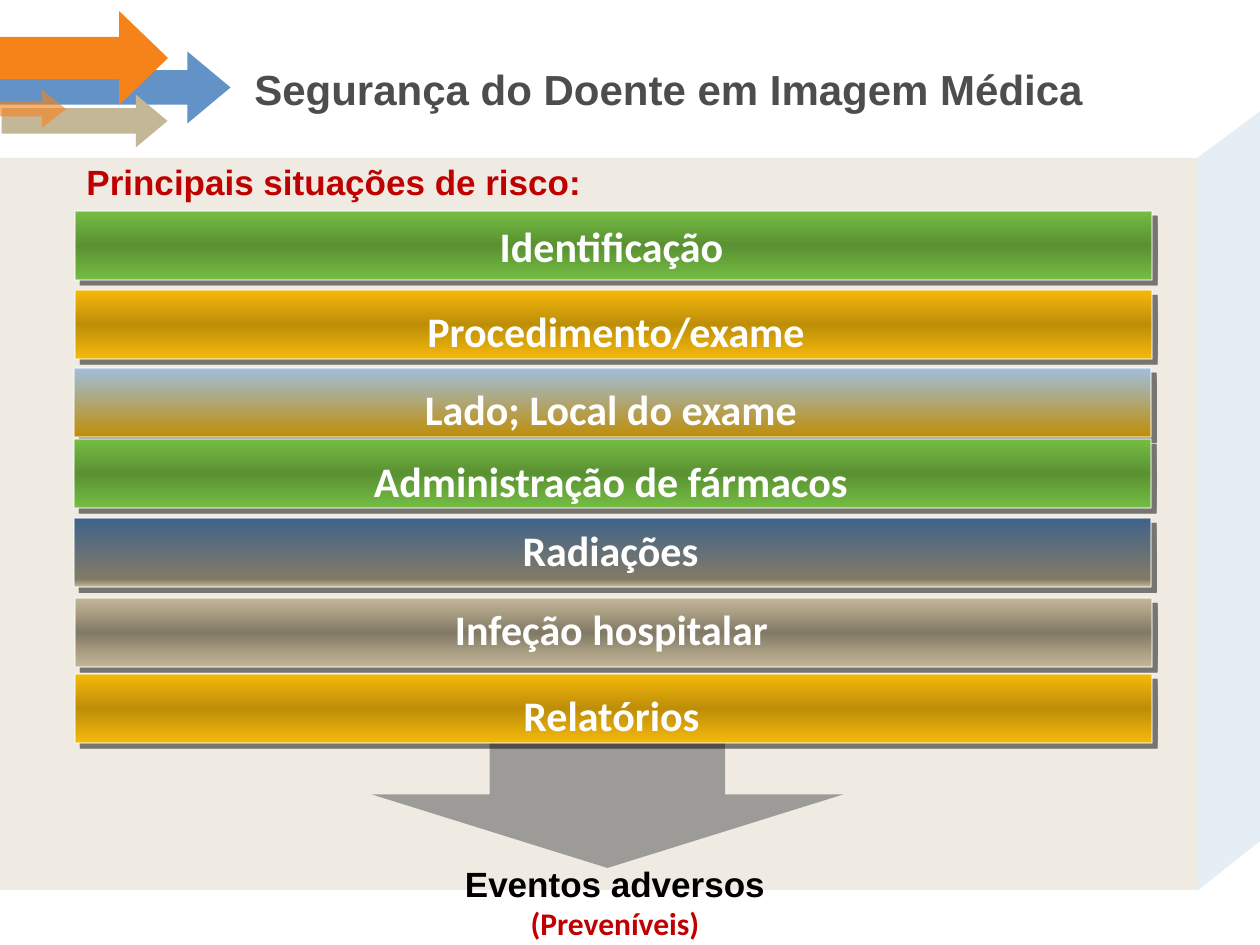
from typing import NamedTuple

from lxml.etree import SubElement
from pptx import Presentation
from pptx.dml.color import RGBColor
from pptx.enum.shapes import MSO_SHAPE
from pptx.enum.text import MSO_ANCHOR, PP_ALIGN
from pptx.oxml.ns import qn
from pptx.util import Pt

PX = 914400 / 126
COLORS = {
    "white": "FEFEFE", "black": "000000", "gray": "4D4D4D", "red": "C00000",
    "blue": "6292C6", "orange": "F6831A", "sand": "C4B798", "sand_dark": "837A66",
    "green": "74BD43", "green_dark": "5A9132", "gold": "F5B80B", "gold_dark": "BE8E08",
    "sky": "A1BEDD", "navy": "3F638A",
}
GREEN = [(0, "green"), (50, "green_dark"), (100, "green")]
GOLD = [(0, "gold"), (50, "gold_dark"), (100, "gold")]
SAND = [(0, "sand"), (50, "sand_dark"), (100, "sand")]
SKY = [(0, "sky"), (100, "gold_dark")]
NAVY = [(0, "navy"), (89, "sand_dark"), (100, "sand")]
BAR_WIDTH, BAR_HEIGHT, LABEL_HEIGHT = 1077, 69, 63


class Box(NamedTuple):
    left: int
    top: int
    width: int
    height: int


class Arrow(NamedTuple):
    box: Box
    shaft: float
    head: float
    color: str
    opacity: int = 100
    kind: MSO_SHAPE = MSO_SHAPE.UP_ARROW
    rotation: int = 90


class Line(NamedTuple):
    text: str
    size: int
    color: str
    font: str = "Arial"


class Risk(NamedTuple):
    text: str
    left: int
    top: int
    label_left: int
    label_top: int
    label_width: int
    stops: list


HEADER_ARROWS = [
    Arrow(Box(79, -28, 72, 231), 0.48, 0.6, "blue"),
    Arrow(Box(37, -26, 94, 168), 0.45, 0.52, "orange"),
    Arrow(Box(58, 38, 53, 166), 0.48, 0.6, "sand"),
    Arrow(Box(14, 76, 38, 66), 0.39, 0.63, "orange", 60),
]
RESULT_ARROW = Arrow(Box(372, 732, 471, 136), 0.5, 0.54, "gray", 50, MSO_SHAPE.DOWN_ARROW, 0)
RISKS = [
    Risk("Identificação", 75, 211, 481, 214, 261, GREEN),
    Risk("Procedimento/exame", 75, 290, 408, 299, 416, GOLD),
    Risk("Lado; Local do exame", 74, 368, 410, 377, 402, SKY),
    Risk("Administração de fármacos", 74, 439, 359, 449, 504, GREEN),
    Risk("Radiações", 74, 518, 509, 518, 203, NAVY),
    Risk("Infeção hospitalar", 75, 598, 441, 597, 341, SAND),
    Risk("Relatórios", 75, 674, 510, 683, 203, GOLD),
]


def px(value: float) -> int:
    return round(value * PX)


def rgb(color: str) -> RGBColor:
    return RGBColor.from_string(COLORS[color])


def set_opacity(properties, percent: int) -> None:
    """Make the first solid colour found in the XML partly transparent."""
    color = next(properties.iter(qn("a:srgbClr")))
    SubElement(color, qn("a:alpha"), val=str(percent * 1000))


def add_shadow(effects, distance: float, opacity: int) -> None:
    """Add a hard black shadow falling to the lower right."""
    shadow = SubElement(effects, qn("a:outerShdw"), blurRad="0", dist=str(Pt(distance)),
                        dir="2700000", algn="ctr", rotWithShape="0")
    SubElement(shadow, qn("a:srgbClr"), val=COLORS["black"])
    set_opacity(shadow, opacity)


def paint(shape, color: str, opacity: int = 100) -> None:
    shape.shadow.inherit = False
    shape.fill.solid()
    shape.fill.fore_color.rgb = rgb(color)
    if opacity < 100:
        set_opacity(shape.element.spPr, opacity)
    shape.line.fill.background()


def add_shape(slide, kind: MSO_SHAPE, box: Box):
    return slide.shapes.add_shape(kind, *map(px, box))


def add_arrow(slide, arrow: Arrow) -> None:
    shape = add_shape(slide, arrow.kind, arrow.box)
    shape.rotation = arrow.rotation
    shape.adjustments[0] = arrow.shaft
    shape.adjustments[1] = arrow.head
    paint(shape, arrow.color, arrow.opacity)


def add_text(slide, box: Box, lines: list[Line], alignment=PP_ALIGN.LEFT,
             anchor=MSO_ANCHOR.TOP, wrap: bool = False):
    frame = slide.shapes.add_textbox(*map(px, box)).text_frame
    frame.word_wrap = wrap
    frame.vertical_anchor = anchor
    frame.text = "\n".join(line.text for line in lines)
    for paragraph, line in zip(frame.paragraphs, lines):
        paragraph.alignment = alignment
        paragraph.font.name = line.font
        paragraph.font.size = Pt(line.size)
        paragraph.font.bold = True
        paragraph.font.color.rgb = rgb(line.color)
    return frame


def add_risk(slide, risk: Risk) -> None:
    bar = add_shape(slide, MSO_SHAPE.RECTANGLE, Box(risk.left, risk.top, BAR_WIDTH, BAR_HEIGHT))
    bar.shadow.inherit = False
    bar.fill.gradient()
    bar.fill.gradient_angle = 270
    properties = bar.element.spPr
    stop_list = next(properties.iter(qn("a:gsLst")))
    stop_list.clear()
    for position, color in risk.stops:
        stop = SubElement(stop_list, qn("a:gs"), pos=str(position * 1000))
        SubElement(stop, qn("a:srgbClr"), val=COLORS[color])
    bar.line.color.rgb = rgb("white")
    bar.line.width = Pt(0.75)
    set_opacity(properties.find(qn("a:ln")), 70)
    add_shadow(properties.find(qn("a:effectLst")), 4.2, 50)

    label = add_text(slide, Box(risk.label_left, risk.label_top, risk.label_width, LABEL_HEIGHT),
                     [Line(risk.text, 24, "white", "Calibri")], PP_ALIGN.CENTER)
    run = label.paragraphs[0].runs[0]
    run.font.color.rgb = rgb("white")
    add_shadow(SubElement(run.font.fill._xPr, qn("a:effectLst")), 1.5, 70)


def add_backdrop(slide) -> None:
    builder = slide.shapes.build_freeform(1197, 158, PX)
    builder.add_line_segments([(1267, 106), (1264, 838), (1197, 891)])
    paint(builder.convert_to_shape(), "blue", 16)
    panel = add_shape(slide, MSO_SHAPE.RECTANGLE, Box(0, 158, 1197, 732))
    paint(panel, "sand", 27)


def main() -> None:
    presentation = Presentation()
    presentation.slide_width, presentation.slide_height = px(1260), px(945)
    slide = presentation.slides.add_slide(presentation.slide_layouts[6])
    add_backdrop(slide)
    for arrow in [*HEADER_ARROWS, RESULT_ARROW]:
        add_arrow(slide, arrow)
    for risk in RISKS:
        add_risk(slide, risk)
    add_text(slide, Box(242, 14, 945, 149),
             [Line("Segurança do Doente em Imagem Médica", 24, "gray")],
             anchor=MSO_ANCHOR.MIDDLE, wrap=True)
    add_text(slide, Box(74, 154, 524, 55), [Line("Principais situações de risco:", 20, "red")])
    add_text(slide, Box(451, 856, 328, 93),
             [Line("Eventos adversos", 20, "black"), Line("(Preveníveis)", 18, "red", "Calibri")],
             PP_ALIGN.CENTER)
    presentation.save("out.pptx")


if __name__ == "__main__":
    main()
